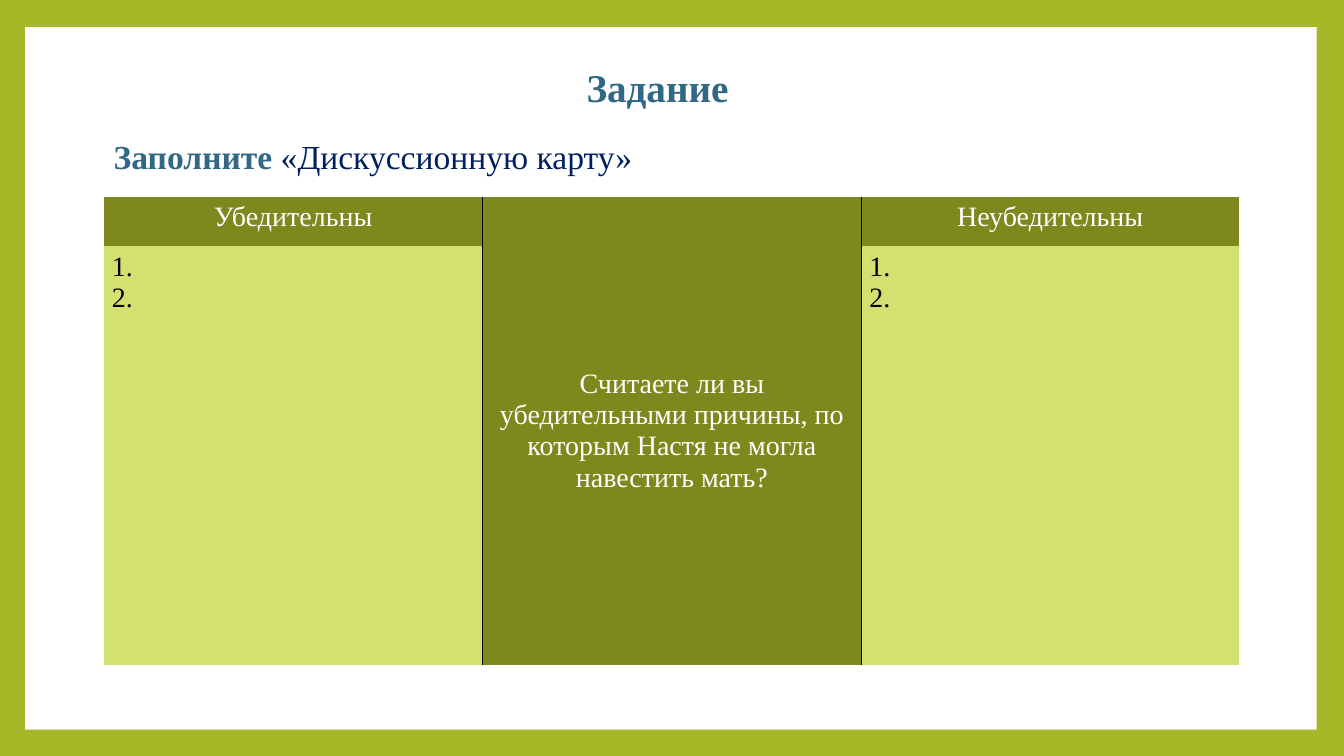
from dataclasses import dataclass

from lxml.etree import SubElement
from pptx import Presentation
from pptx.dml.color import RGBColor
from pptx.enum.shapes import MSO_SHAPE
from pptx.enum.text import MSO_ANCHOR, MSO_AUTO_SIZE, PP_ALIGN
from pptx.oxml.ns import qn
from pptx.util import Emu, Pt

EMU_PER_PX = 9144
NO_TABLE_STYLE = "{2D5ABB26-0587-4C30-8999-92F81FD0307C}"
COLORS = {
    "frame": "A6B727",
    "panel": "FFFFFF",
    "accent": "316886",
    "navy": "002060",
    "heading": "7D891D",
    "answers": "D3E171",
    "light": "FFFFFF",
    "dark": "000000",
}


@dataclass(frozen=True)
class Run:
    text: str
    color: str
    size: int
    bold: bool = False


@dataclass(frozen=True)
class CardCell:
    row: int
    column: int
    lines: tuple[str, ...]
    fill: str
    color: str
    align: PP_ALIGN
    anchor: MSO_ANCHOR = MSO_ANCHOR.TOP


CARD_CELLS = [
    CardCell(0, 0, ("Убедительны",), "heading", "light", PP_ALIGN.CENTER),
    CardCell(0, 1, ("Считаете ли вы убедительными причины, по которым Настя не могла навестить мать?",),
             "heading", "light", PP_ALIGN.CENTER, MSO_ANCHOR.MIDDLE),
    CardCell(0, 2, ("Неубедительны",), "heading", "light", PP_ALIGN.CENTER),
    CardCell(1, 0, ("1.", "2."), "answers", "dark", PP_ALIGN.LEFT),
    CardCell(1, 2, ("1.", "2."), "answers", "dark", PP_ALIGN.LEFT),
]
COLUMN_BORDERS = [("a:lnR",), ("a:lnL", "a:lnR"), ("a:lnL",)]


def px(length: int) -> Emu:
    return Emu(length * EMU_PER_PX)


def rgb(name: str) -> RGBColor:
    return RGBColor.from_string(COLORS[name])


def apply_format(target, values: dict) -> None:
    for attribute, value in values.items():
        setattr(target, attribute, value)


def place(shape, left: int, top: int, width: int, height: int) -> None:
    apply_format(shape, {"left": px(left), "top": px(top),
                         "width": px(width), "height": px(height)})


def write_line(paragraph, runs: list[Run], align: PP_ALIGN) -> None:
    paragraph.alignment = align
    for part in runs:
        run = paragraph.add_run()
        run.text = part.text
        apply_format(run.font, {"name": "Times New Roman", "size": Pt(part.size),
                                "bold": part.bold})
        run.font.color.rgb = rgb(part.color)


def write_caption(shape, runs: list[Run], align: PP_ALIGN) -> None:
    apply_format(shape.text_frame, {"word_wrap": True, "vertical_anchor": MSO_ANCHOR.TOP,
                                    "auto_size": MSO_AUTO_SIZE.SHAPE_TO_FIT_TEXT})
    write_line(shape.text_frame.paragraphs[0], runs, align)


def add_border(cell, side: str) -> None:
    line = SubElement(cell._tc.get_or_add_tcPr(), qn(side), w=str(Pt(0.45)))
    fill = SubElement(line, qn("a:solidFill"))
    SubElement(fill, qn("a:srgbClr"), val=COLORS["dark"])


def fill_cell(cell, content: CardCell) -> None:
    apply_format(cell, {"margin_left": px(8), "margin_right": px(8), "margin_top": px(5),
                        "margin_bottom": px(5), "vertical_anchor": content.anchor})
    cell.fill.solid()
    cell.fill.fore_color.rgb = rgb(content.fill)
    frame = cell.text_frame
    for index, line in enumerate(content.lines):
        paragraph = frame.add_paragraph() if index else frame.paragraphs[0]
        write_line(paragraph, [Run(line, content.color, 20)], content.align)


def add_discussion_card(slide) -> None:
    graphic = slide.shapes.add_table(2, 3, px(103), px(195), px(1127), px(465))
    graphic._element.find(".//" + qn("a:tableStyleId")).text = NO_TABLE_STYLE
    card = graphic.table
    apply_format(card, {"first_row": False, "horz_banding": False})
    for column, width in zip(card.columns, (376, 376, 375)):
        column.width = px(width)
    for row, height in zip(card.rows, (49, 416)):
        row.height = px(height)
    for row in card.rows:
        for cell, sides in zip(row.cells, COLUMN_BORDERS):
            for side in sides:
                add_border(cell, side)
    card.cell(0, 1).merge(card.cell(1, 1))
    for content in CARD_CELLS:
        fill_cell(card.cell(content.row, content.column), content)


def main() -> None:
    deck = Presentation()
    apply_format(deck, {"slide_width": px(1334), "slide_height": px(750)})
    slide = deck.slides.add_slide(deck.slide_layouts[5])
    slide.background.fill.solid()
    slide.background.fill.fore_color.rgb = rgb("frame")

    panel = slide.shapes.add_shape(MSO_SHAPE.RECTANGLE, px(25), px(27), px(1282), px(697))
    panel.shadow.inherit = False
    panel.fill.solid()
    panel.fill.fore_color.rgb = rgb("panel")
    panel.line.fill.background()
    slide.shapes._spTree.insert(2, panel._element)

    title = slide.shapes.title
    place(title, 72, 58, 1171, 57)
    write_caption(title, [Run("Задание ", "accent", 28, True)], PP_ALIGN.CENTER)

    instruction = slide.shapes.add_textbox(px(103), px(130), px(1127), px(50))
    write_caption(instruction, [Run("Заполните", "accent", 24, True),
                                Run(" «Дискуссионную карту»", "navy", 24)], PP_ALIGN.LEFT)

    add_discussion_card(slide)
    deck.save("out.pptx")


if __name__ == "__main__":
    main()
